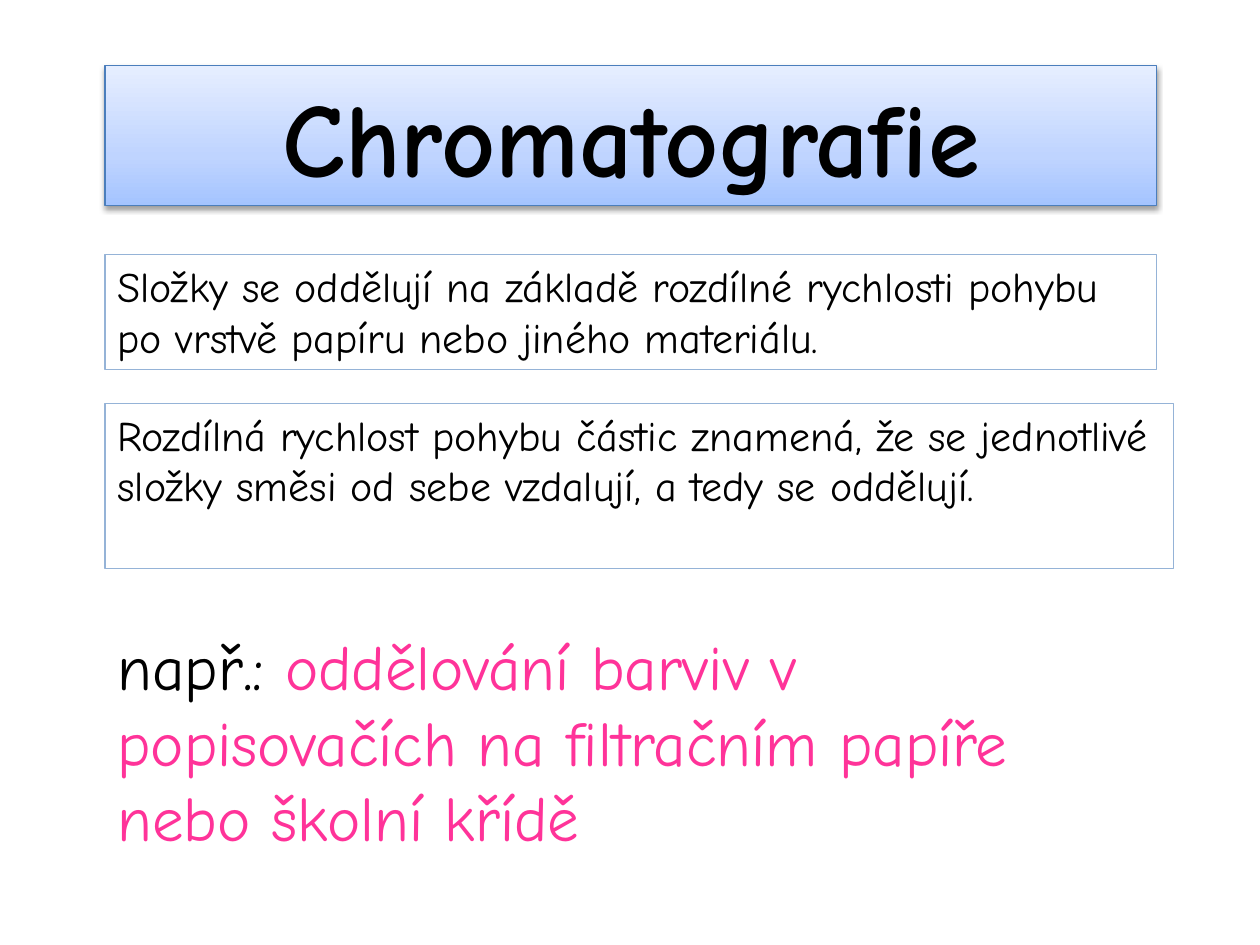
from pptx import Presentation
from pptx.dml.color import RGBColor
from pptx.enum.text import MSO_ANCHOR, MSO_AUTO_SIZE, PP_ALIGN
from pptx.oxml import parse_xml
from pptx.oxml.ns import nsdecls
from pptx.util import Pt

BLACK = RGBColor(0x00, 0x00, 0x00)
PINK = RGBColor(0xFF, 0x33, 0x99)
BLUE = RGBColor(0x4B, 0x7E, 0xBC)
PALE = RGBColor(0x95, 0xB3, 0xD7)
STOPS = {
    0: RGBColor(0xA4, 0xC4, 0xFF),
    35: RGBColor(0xBF, 0xD4, 0xFF),
    100: RGBColor(0xE6, 0xEE, 0xFF),
}
FONT = "Comic Neue"
LEFT, WIDE = 60, 601


def place(shape, box):
    """Move a shape to a box given in points."""
    for name, value in zip(("left", "top", "width", "height"), box):
        setattr(shape, name, Pt(value))


def outline(shape, color):
    """Give a shape a thin line."""
    shape.line.color.rgb = color
    shape.line.width = Pt(0.75)


def write(shape, runs, size, align=PP_ALIGN.LEFT, anchor=MSO_ANCHOR.TOP, bold=False):
    """Fill a shape with one paragraph of coloured runs."""
    frame = shape.text_frame
    look = {"word_wrap": True, "auto_size": MSO_AUTO_SIZE.NONE, "vertical_anchor": anchor}
    for name, value in look.items():
        setattr(frame, name, value)
    para = frame.paragraphs[0]
    para.alignment = align
    for text, color in runs:
        run = para.add_run()
        run.text = text
        for name, value in {"name": FONT, "size": Pt(size), "bold": bold}.items():
            setattr(run.font, name, value)
        run.font.color.rgb = color


def banner(slide, box, text):
    """Format the title as a shaded, shadowed banner."""
    title = slide.shapes.title
    place(title, box)
    stops = "".join(
        f'<a:gs pos="{pos * 1000}"><a:srgbClr val="{color}"/></a:gs>'
        for pos, color in STOPS.items()
    )
    props = title.element.spPr
    props.append(parse_xml(
        f'<a:gradFill {nsdecls("a")} rotWithShape="1"><a:gsLst>{stops}</a:gsLst>'
        '<a:lin ang="16200000" scaled="0"/></a:gradFill>'
    ))
    outline(title, BLUE)
    props.append(parse_xml(
        f'<a:effectLst {nsdecls("a")}><a:outerShdw blurRad="{Pt(3.1)}" dist="{Pt(1.6)}" '
        'dir="5400000" rotWithShape="0"><a:srgbClr val="000000">'
        '<a:alpha val="38000"/></a:srgbClr></a:outerShdw></a:effectLst>'
    ))
    write(title, [(text, BLACK)], 60, PP_ALIGN.CENTER, MSO_ANCHOR.MIDDLE, True)


def note(slide, box, runs, size, line=None):
    """Add a text box, framed when a line colour is given."""
    shape = slide.shapes.add_textbox(*map(Pt, box))
    if line is not None:
        outline(shape, line)
    write(shape, runs, size)


def main():
    """Build and save the slide."""
    deck = Presentation()
    deck.slide_width, deck.slide_height = Pt(720), Pt(540)
    slide = deck.slides.add_slide(deck.slide_layouts[5])
    banner(slide, (LEFT, 37.5, WIDE, 80), "Chromatografie")
    note(slide, (LEFT, 145.5, WIDE, 65.5), [(
        "Složky se oddělují na základě rozdílné rychlosti pohybu "
        "po vrstvě papíru nebo jiného materiálu.", BLACK)], 24, PALE)
    note(slide, (LEFT, 230.5, 610.5, 94.5), [(
        "Rozdílná rychlost pohybu částic znamená, že se jednotlivé "
        "složky směsi od sebe vzdalují, a tedy se oddělují.", BLACK)], 24, PALE)
    note(slide, (LEFT, 355, WIDE, 138), [
        ("např.: ", BLACK),
        ("oddělování barviv v popisovačích na filtračním papíře "
         "nebo školní křídě", PINK)], 36)
    deck.save("out.pptx")


if __name__ == "__main__":
    main()
